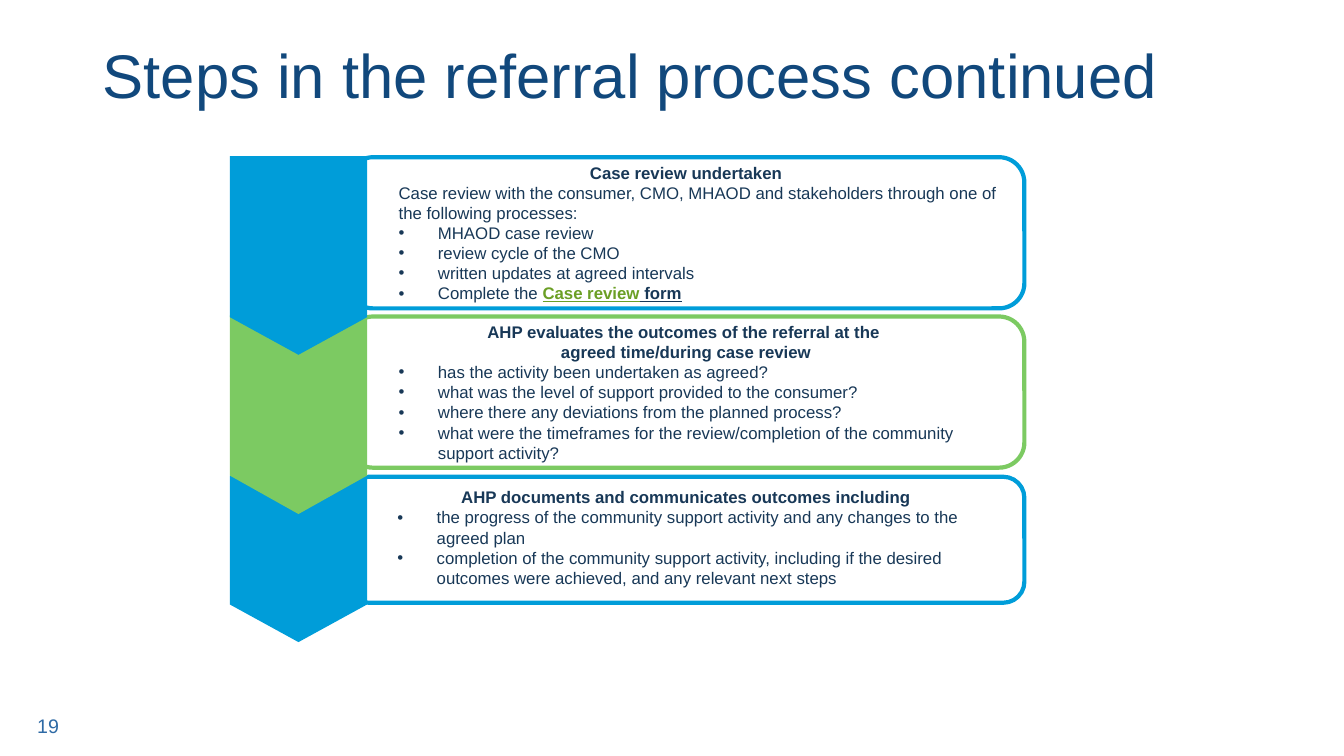
from lxml import etree
from pptx import Presentation
from pptx.dml.color import RGBColor
from pptx.enum.shapes import MSO_SHAPE
from pptx.enum.text import MSO_ANCHOR, PP_ALIGN
from pptx.oxml.ns import qn
from pptx.util import Inches, Pt

ROUNDED, ARROW = MSO_SHAPE.ROUNDED_RECTANGLE, MSO_SHAPE.PENTAGON
TOP, MIDDLE = MSO_ANCHOR.TOP, MSO_ANCHOR.MIDDLE
LEFT, CENTER = PP_ALIGN.LEFT, PP_ALIGN.CENTER

BLUE, GREEN = "009DD9", "7CCA62"
INK, LINK, TITLE_BLUE, NUMBER_BLUE = "183857", "6B9F25", "11487C", "2E6AA5"

TITLE = "Steps in the referral process continued"
PAGE_NUMBER = "19"
STEPS = [
    {"color": BLUE, "top": 1.56, "height": 1.5, "anchor": MIDDLE,
     "arrow_top": 1.55, "arrow_length": 1.97, "arrow_adj": 0.274,
     "lines": [
         ("heading", "Case review undertaken"),
         ("intro", "Case review with the consumer, CMO, MHAOD and stakeholders "
                   "through one of the following processes:"),
         ("bullet", "MHAOD case review"),
         ("bullet", "review cycle of the CMO"),
         ("bullet", "written updates at agreed intervals"),
         ("bullet", [("Complete the ", {}),
                     ("Case review", {"color": LINK, "bold": True, "underline": True}),
                     (" form", {"bold": True, "underline": True})])]},
    {"color": GREEN, "top": 3.14, "height": 1.5, "anchor": MIDDLE,
     "arrow_top": 3.13, "arrow_length": 1.97, "arrow_adj": 0.28,
     "lines": [
         ("heading", "AHP evaluates the outcomes of the referral at the "),
         ("heading", "agreed time/during case review"),
         ("bullet", "has the activity been undertaken as agreed?"),
         ("bullet", "what was the level of support provided to the consumer?"),
         ("bullet", "where there any deviations from the planned process?"),
         ("bullet", "what were the timeframes for the review/completion of the "
                    "community support activity?")]},
    {"color": BLUE, "top": 4.73, "height": 1.25, "anchor": TOP,
     "arrow_top": 4.72, "arrow_length": 1.65, "arrow_adj": 0.274,
     "lines": [
         ("heading", "AHP documents and communicates outcomes including"),
         ("bullet", "the progress of the community support activity and any "
                    "changes to the agreed plan"),
         ("bullet", "completion of the community support activity, including if "
                    "the desired outcomes were achieved, and any relevant next steps")]},
]
LINE_STYLES = {
    "heading": {"align": CENTER, "bold": True},
    "intro": {"margin": 0.39},
    "bullet": {"margin": 0.78, "hanging": 0.39, "bullet": "•"},
}
BOX_LEFT, BOX_WIDTH = 3.45, 6.71
ARROW_CENTER, ARROW_WIDTH = 2.96, 1.36


def rgb(value):
    return RGBColor.from_string(value)


def write(paragraph, text, size=12, color=INK, bold=False, align=LEFT,
          margin=0, hanging=0, bullet=None, spacing=None):
    paragraph.alignment = align
    if spacing:
        paragraph.line_spacing = spacing
    properties = paragraph._p.get_or_add_pPr()
    properties.set("marL", str(Inches(margin)))
    properties.set("indent", str(-Inches(hanging)))
    if bullet:
        etree.SubElement(properties, qn("a:buFont"), typeface="Arial")
        etree.SubElement(properties, qn("a:buChar"), char=bullet)
    pieces = [(text, {})] if isinstance(text, str) else text
    for words, changes in pieces:
        run = paragraph.add_run()
        run.text = words
        run.font.name = "Arial"
        run.font.size = Pt(size)
        run.font.color.rgb = rgb(changes.get("color", color))
        run.font.bold = changes.get("bold", bold)
        run.font.underline = changes.get("underline", False)


def add_label(slide, text, left, top, width, height, anchor=TOP, **style):
    frame = slide.shapes.add_textbox(*map(Inches, (left, top, width, height))).text_frame
    frame.word_wrap = True
    frame.vertical_anchor = anchor
    write(frame.paragraphs[0], text, **style)


def add_box(slide, step):
    box = slide.shapes.add_shape(
        ROUNDED, *map(Inches, (BOX_LEFT, step["top"], BOX_WIDTH, step["height"])))
    box.shadow.inherit = False
    box.adjustments[0] = 0.167
    box.fill.background()
    box.line.color.rgb = rgb(step["color"])
    box.line.width = Pt(3)
    frame = box.text_frame
    frame.word_wrap = True
    frame.vertical_anchor = step["anchor"]
    frame.margin_left = frame.margin_right = Inches(0.04)
    frame.margin_top = frame.margin_bottom = Inches(0.04)
    for index, (kind, text) in enumerate(step["lines"]):
        paragraph = frame.add_paragraph() if index else frame.paragraphs[0]
        write(paragraph, text, **LINE_STYLES[kind])


def add_arrow(slide, step):
    length = step["arrow_length"]
    left = ARROW_CENTER - length / 2
    top = step["arrow_top"] + (length - ARROW_WIDTH) / 2
    arrow = slide.shapes.add_shape(
        ARROW, *map(Inches, (left, top, length, ARROW_WIDTH)))
    arrow.rotation = 90
    arrow.adjustments[0] = step["arrow_adj"]
    arrow.shadow.inherit = False
    arrow.fill.solid()
    arrow.fill.fore_color.rgb = rgb(step["color"])
    arrow.line.fill.background()


def main():
    deck = Presentation()
    deck.slide_width, deck.slide_height = Inches(13.33), Inches(7.5)
    slide = deck.slides.add_slide(deck.slide_layouts[6])
    add_label(slide, PAGE_NUMBER, 0.27, 7, 1.02, 0.4, anchor=MIDDLE,
              size=14, color=NUMBER_BLUE)
    for step in STEPS:
        add_box(slide, step)
    for step in reversed(STEPS):
        add_arrow(slide, step)
    add_label(slide, TITLE, 0.92, 0.4, 11.5, 1.45, size=44, color=TITLE_BLUE, spacing=0.9)
    deck.save("out.pptx")


if __name__ == "__main__":
    main()
